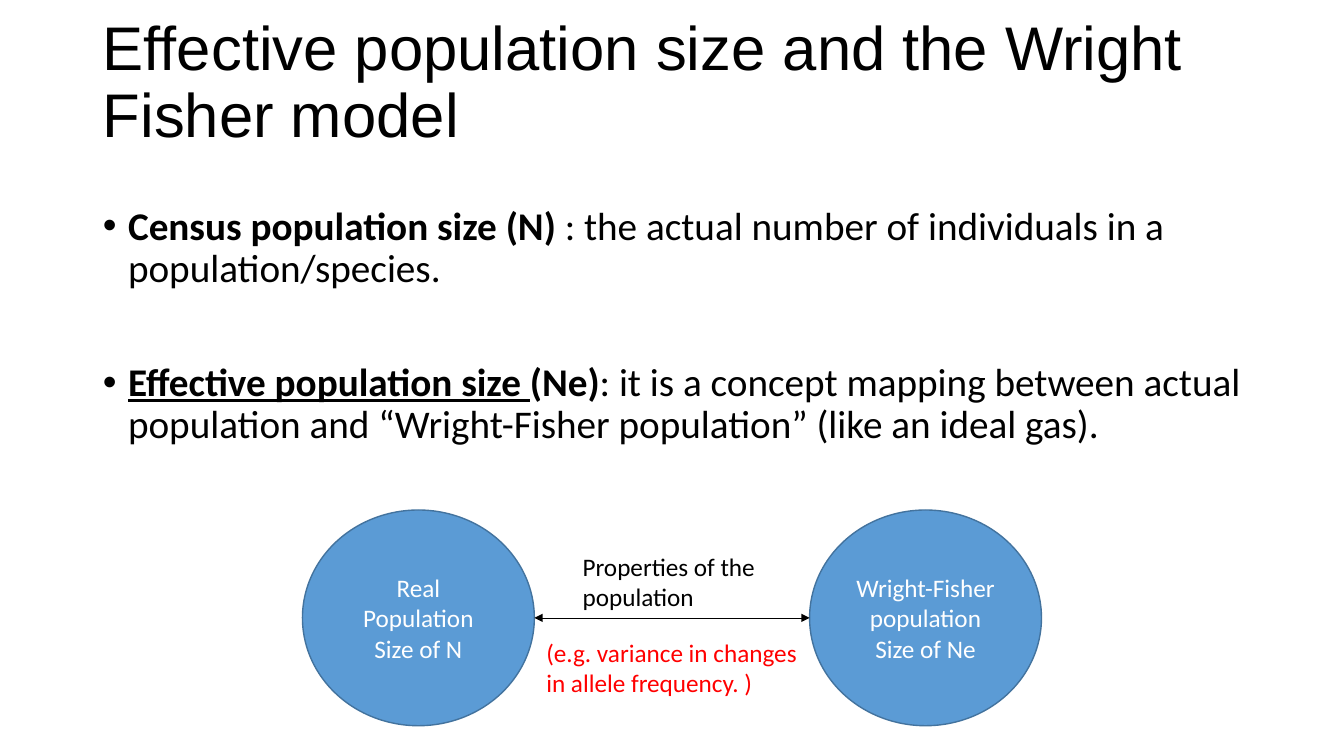
from dataclasses import dataclass

from lxml import etree
from pptx import Presentation
from pptx import util as u
from pptx.dml.color import RGBColor
from pptx.enum import shapes, text
from pptx.oxml import ns

HUES = {"ink": "000000", "paper": "FFFFFF", "disc": "5B9BD5",
        "edge": "43739E", "note": "FF0000"}
WIDE, HIGH, TOP = 2.3, 2.14, 5.06
MID = TOP + HIGH / 2


@dataclass
class Disc:
    left: float
    lines: list[str]


@dataclass
class Label:
    box: tuple[float, float, float, float]
    lines: list[str]
    hue: str


DISCS = [Disc(3, ["Real Population", "Size of N"]),
         Disc(8.03, ["Wright-Fisher population", "Size of Ne"])]
LABELS = [
    Label((5.68, 5.42, 1.99, 0.71), ["Properties of the", "population"], "ink"),
    Label((5.32, 6.27, 2.72, 0.71),
          ["(e.g. variance in changes", "in allele frequency. )"], "note"),
]
TERMS = [
    [("Census population size (N) ", {"bold": True}),
     (": the actual number of individuals in a population/species.", {})],
    [("Effective population size ", {"bold": True, "line": True}),
     ("(Ne)", {"bold": True}),
     (": it is a concept mapping between actual population and "
      "“Wright-Fisher population” (like an ideal gas).", {})],
]


def color(name: str) -> RGBColor:
    return RGBColor.from_string(HUES[name])


def place(shape, left: float, top: float, width: float, height: float) -> None:
    shape.left, shape.top = u.Inches(left), u.Inches(top)
    shape.width, shape.height = u.Inches(width), u.Inches(height)


def write(para, words: str, size: float = 18, face: str = "Calibri",
          hue: str = "ink", bold: bool = False, line: bool = False) -> None:
    run = para.add_run()
    run.text = words
    font = run.font
    font.size, font.name = u.Pt(size), face
    font.bold, font.underline = bold, line
    font.color.rgb = color(hue)


def paras(frame, count: int) -> list:
    """Return count paragraphs, the first being the one already there."""
    return [frame.paragraphs[0]] + [frame.add_paragraph() for _ in range(count - 1)]


def add_title(slide) -> None:
    title = slide.shapes.title
    place(title, 0.92, 0.11, 11.5, 1.45)
    frame = title.text_frame
    frame.auto_size = text.MSO_AUTO_SIZE.NONE
    frame.vertical_anchor = text.MSO_ANCHOR.MIDDLE
    para = frame.paragraphs[0]
    para.alignment, para.line_spacing = text.PP_ALIGN.LEFT, 0.9
    write(para, "Effective population size and the Wright Fisher model",
          size=44, face="Arial")


def add_terms(slide) -> None:
    body = slide.placeholders[1]
    place(body, 0.92, 2, 11.5, 4.76)
    frame = body.text_frame
    frame.auto_size = text.MSO_AUTO_SIZE.NONE
    for para, runs, gap in zip(paras(frame, len(TERMS)), TERMS, (10, 51)):
        para.line_spacing, para.space_before = 0.9, u.Pt(gap)
        props = para._p.get_or_add_pPr()
        props.set("marL", str(u.Inches(0.25)))
        props.set("indent", str(u.Inches(-0.25)))
        etree.SubElement(props, ns.qn("a:buFont")).set("typeface", "Arial")
        etree.SubElement(props, ns.qn("a:buChar")).set("char", "•")
        for words, style in runs:
            write(para, words, size=28, **style)


def add_disc(slide, disc: Disc) -> None:
    oval = slide.shapes.add_shape(
        shapes.MSO_SHAPE.OVAL, u.Inches(disc.left), u.Inches(TOP),
        u.Inches(WIDE), u.Inches(HIGH))
    oval.shadow.inherit = False
    oval.fill.solid()
    oval.fill.fore_color.rgb = color("disc")
    oval.line.color.rgb = color("edge")
    oval.line.width = u.Pt(1)
    frame = oval.text_frame
    frame.vertical_anchor = text.MSO_ANCHOR.MIDDLE
    for para, words in zip(paras(frame, len(disc.lines)), disc.lines):
        para.alignment = text.PP_ALIGN.CENTER
        write(para, words, hue="paper")


def add_arrow(slide, start: float, end: float) -> None:
    """Draw a level line with a head at both ends."""
    arrow = slide.shapes.add_connector(
        shapes.MSO_CONNECTOR.STRAIGHT, u.Inches(start), u.Inches(MID),
        u.Inches(end), u.Inches(MID))
    arrow.line.color.rgb = color("ink")
    arrow.line.width = u.Pt(0.5)
    stroke = arrow.line._get_or_add_ln()
    for tag in ("a:headEnd", "a:tailEnd"):
        etree.SubElement(stroke, ns.qn(tag)).set("type", "triangle")
    etree.SubElement(arrow._element.spPr, ns.qn("a:effectLst"))


def add_label(slide, label: Label) -> None:
    box = slide.shapes.add_textbox(*map(u.Inches, label.box))
    frame = box.text_frame
    frame.word_wrap = False
    frame.auto_size = text.MSO_AUTO_SIZE.SHAPE_TO_FIT_TEXT
    for para, words in zip(paras(frame, len(label.lines)), label.lines):
        write(para, words, hue=label.hue)


def main() -> None:
    deck = Presentation()
    deck.slide_width, deck.slide_height = u.Inches(13.33), u.Inches(7.5)
    slide = deck.slides.add_slide(deck.slide_layouts[1])
    add_title(slide)
    add_terms(slide)
    for disc in DISCS:
        add_disc(slide, disc)
    add_arrow(slide, DISCS[0].left + WIDE, DISCS[1].left)
    for label in LABELS:
        add_label(slide, label)
    deck.save("out.pptx")


if __name__ == "__main__":
    main()
